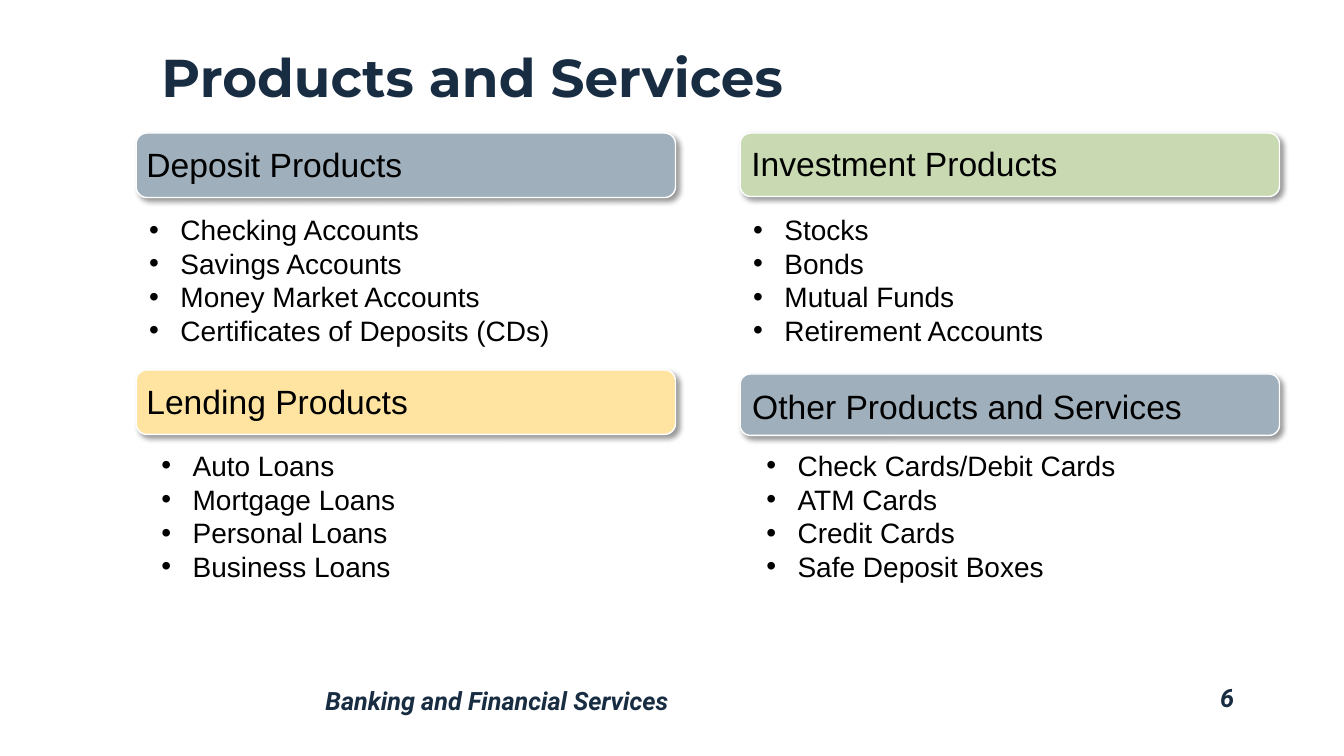
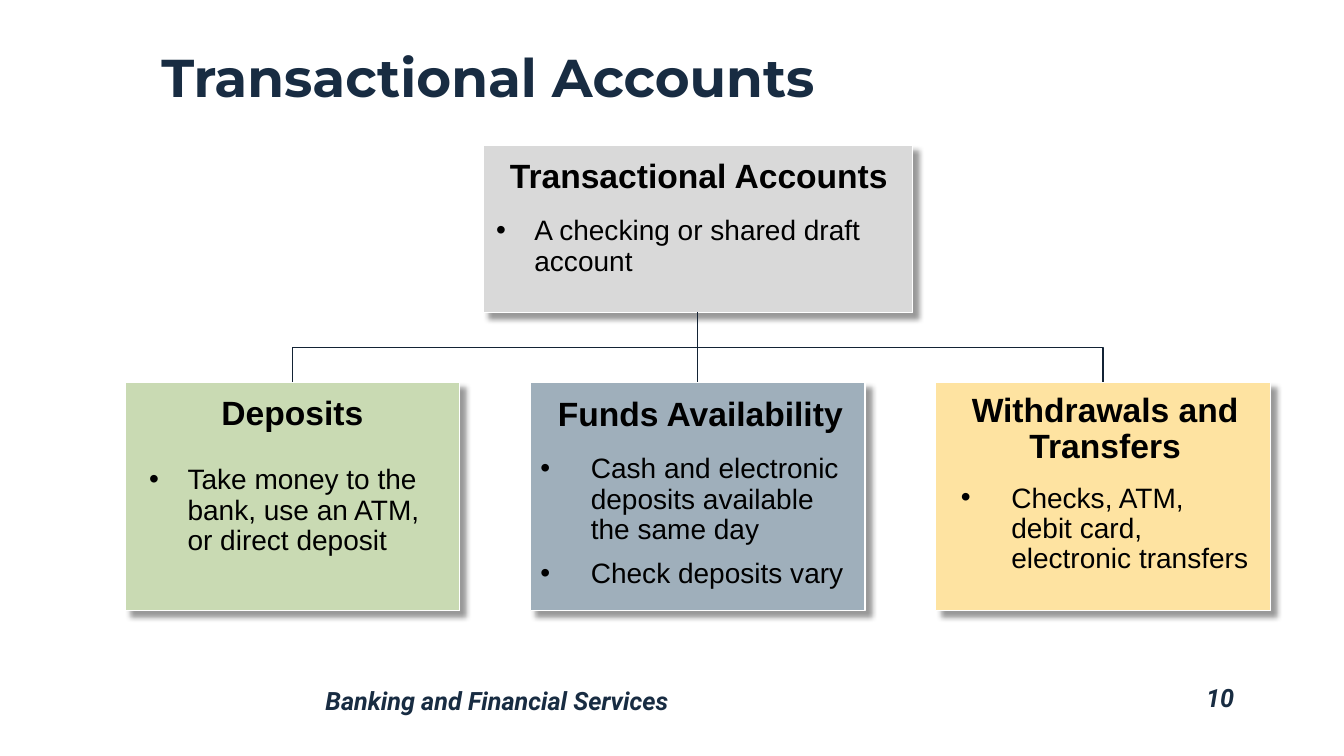
import pptx
import pptx.util
import pptx.dml.color
import pptx.enum.shapes
import pptx.enum.text
import pptx.oxml
import pptx.oxml.ns
from lxml import etree

Inches, Pt = pptx.util.Inches, pptx.util.Pt
SHAPE = pptx.enum.shapes.MSO_SHAPE
ALIGN = pptx.enum.text.PP_ALIGN
ANCHOR = pptx.enum.text.MSO_ANCHOR
qn = pptx.oxml.ns.qn

# Shared look
COLORS = {"navy": "182C42", "line": "132335", "black": "000000", "white": "FFFFFF",
          "slate": "9FAFBB", "yellow": "FEE3A1", "green": "C9DAB3", "gray": "D9D9D9"}
FOOTER = "Banking and Financial Services"
FOOTER_FORMAT = dict(font="Roboto", size=18, color="navy", bold=True, italic=True, spacing=0.9)

# Content: heading, fill, card box, heading inset (left, top), list items, list box
COL, CARD_W = (1.35, 7.34), 5.35
PRODUCTS = [
    ("Deposit Products", "slate", (COL[0], 1.32, CARD_W, 0.64), (0.07, 0.02),
     ["Checking Accounts", "Savings Accounts", "Money Market Accounts",
      "Certificates of Deposits (CDs)"], (1.38, 2.06, 5.35, 1.49)),
    ("Lending Products", "yellow", (COL[0], 3.67, CARD_W, 0.64), (0.07, 0.03),
     ["Auto Loans", "Mortgage Loans", "Personal Loans", "Business Loans"],
     (1.5, 4.4, 5.21, 1.37)),
    ("Investment Products", "green", (COL[1], 1.32, CARD_W, 0.63), (0.08, 0.02),
     ["Stocks", "Bonds", "Mutual Funds", "Retirement Accounts"],
     (7.37, 2.06, 4.97, 1.53)),
    ("Other Products and Services", "slate", (COL[1], 3.71, CARD_W, 0.61), (0.09, 0.07),
     ["Check Cards/Debit Cards", "ATM Cards", "Credit Cards", "Safe Deposit Boxes"],
     (7.5, 4.4, 4.7, 1.44)),
]

CHILD_X, CHILD_STEP, CHILD_Y, CHILD_W, CHILD_H = 1.24, 4.02, 3.79, 3.32, 2.27
BRANCHES = [(CHILD_X + i * CHILD_STEP, CHILD_Y, CHILD_W, CHILD_H) for i in range(3)]
ACCOUNTS = [
    ("Transactional Accounts", "gray", (4.79, 1.44, 4.26, 1.66), (0.12, 0.14),
     ["A checking or shared draft account"], (4.82, 2.1, 4.24, 0.9)),
    ("Deposits", "green", BRANCHES[0], (0.1, 0.14),
     ["Take money to the bank, use an ATM, or direct deposit"], (1.38, 4.57, 3.17, 1.01)),
    ("Funds Availability", "slate", BRANCHES[1], (0.15, 0.15),
     ["Cash and electronic deposits available the same day", "Check deposits vary"],
     (5.26, 4.46, 3.29, 1.06)),
    ("Withdrawals and Transfers", "yellow", BRANCHES[2], (0.14, 0.11),
     ["Checks, ATM, debit card, electronic transfers"], (9.43, 4.75, 3.06, 1.06)),
]
ACCOUNT_INDENTS = [0.38, 0.38, 0.5, 0.5]


def rgb(name):
    return pptx.dml.color.RGBColor.from_string(COLORS[name])


def place(sp, box):
    sp.left, sp.top, sp.width, sp.height = map(Inches, box)


def add_text(tf, lines, font="Arial", size=20, color="black", bold=False, italic=False,
             align=ALIGN.LEFT, anchor=ANCHOR.TOP, spacing=1.0, gap=0, indent=0,
             inset=(0.1, 0.05, 0.1, 0.05)):
    """Write paragraphs into a text frame; an indent makes them bulleted."""
    tf.word_wrap = True
    tf.auto_size = pptx.enum.text.MSO_AUTO_SIZE.NONE
    tf.vertical_anchor = anchor
    tf.margin_left, tf.margin_top, tf.margin_right, tf.margin_bottom = map(Inches, inset)
    for i, line in enumerate(lines):
        p = tf.add_paragraph() if i else tf.paragraphs[0]
        if indent:
            pPr = p._p.get_or_add_pPr()
            pPr.set("marL", str(Inches(indent)))
            pPr.set("indent", str(-Inches(indent)))
            etree.SubElement(pPr, qn("a:buFont")).set("typeface", "Arial")
            etree.SubElement(pPr, qn("a:buChar")).set("char", "•")
        p.alignment = align
        p.line_spacing = spacing
        p.space_before = Pt(gap if i else 0)
        p.space_after = Pt(0)
        r = p.add_run()
        r.text = line
        r.font.name, r.font.size = font, Pt(size)
        r.font.bold, r.font.italic = bold, italic
        r.font.color.rgb = rgb(color)


def add_slide(prs, title, number):
    """Comparison layout: a title and four body placeholders."""
    s = prs.slides.add_slide(prs.slide_layouts[4])
    place(s.shapes.title, (1.5, 0.11, 10.84, 1.02))
    add_text(s.shapes.title.text_frame, [title], font="Montserrat", size=38, color="navy",
             bold=True, anchor=ANCHOR.BOTTOM, spacing=0.9)
    for text, box, align in ((FOOTER, (3.13, 6.78, 7.63, 0.38), ALIGN.LEFT),
                             (str(number), (10.76, 6.75, 1.58, 0.38), ALIGN.RIGHT)):
        sp = s.shapes.add_textbox(*map(Inches, box))
        add_text(sp.text_frame, [text], align=align, **FOOTER_FORMAT)
    return s


def add_card(s, shape, fill, box, distance):
    """Filled card with a soft shadow, set behind the placeholders."""
    sp = s.shapes.add_shape(shape, *map(Inches, box))
    sp.fill.solid()
    sp.fill.fore_color.rgb = rgb(fill)
    sp.line.color.rgb = rgb("white")
    sp.line.width = Pt(1)
    sp.shadow.inherit = False
    effects = sp.element.spPr.find(qn("a:effectLst"))
    shadow = etree.SubElement(effects, qn("a:outerShdw"), blurRad=str(Pt(4)),
                              dist=str(Pt(distance)), dir=str(45 * 60000),
                              algn="tl", rotWithShape="0")
    color = etree.SubElement(shadow, qn("a:srgbClr"), val=COLORS["black"])
    etree.SubElement(color, qn("a:alpha"), val="40000")
    s.shapes.title.element.addprevious(sp.element)
    return sp


def add_cards(s, cards, shape, distance, heading, lists, indents):
    """Draw each card with its heading, and its list in a body placeholder."""
    shapes = []
    bodies = list(s.placeholders)[1:]
    for (name, fill, box, (left, top), items, list_box), body, indent in zip(
            cards, bodies, indents):
        sp = add_card(s, shape, fill, box, distance)
        add_text(sp.text_frame, [name], size=24, spacing=0.9,
                 inset=(left, top, 0.1, 0), **heading)
        place(body, list_box)
        add_text(body.text_frame, items, indent=indent, **lists)
        shapes.append(sp)
    return shapes


def style_line(line):
    line.color.rgb = rgb("line")
    line.width = Pt(1)


def add_trunk(s, parent, child):
    cx = s.shapes.add_connector(pptx.enum.shapes.MSO_CONNECTOR.STRAIGHT, 0, 0, 0, 0)
    cx.begin_connect(parent, 2)
    cx.end_connect(child, 0)
    style_line(cx.line)
    etree.SubElement(cx.element.spPr, qn("a:effectLst"))


def add_elbow(s, parent, child):
    """Open line from the parent's bottom to the child's top, turning halfway."""
    x1, y1 = parent.left + parent.width // 2, parent.top + parent.height
    x2, y2 = child.left + child.width // 2, child.top
    bar_y = (y1 + y2) // 2
    outline = s.shapes.build_freeform(x1, y1)
    outline.add_line_segments([(x1, bar_y), (x2, bar_y), (x2, y2)], close=False)
    sp = outline.convert_to_shape()
    sp.fill.background()
    style_line(sp.line)
    sp.shadow.inherit = False


def products_slide(prs):
    s = add_slide(prs, "Products and Services", 6)
    cards = add_cards(s, PRODUCTS, SHAPE.ROUNDED_RECTANGLE, 3,
                      dict(anchor=ANCHOR.MIDDLE), {}, [0.31] * 4)
    for sp in cards:
        sp.adjustments[0] = 0.17


def accounts_slide(prs):
    s = add_slide(prs, "Transactional Accounts", 10)
    parent, left, middle, right = add_cards(
        s, ACCOUNTS, SHAPE.RECTANGLE, 6, dict(bold=True, align=ALIGN.CENTER),
        dict(spacing=0.9, gap=10), ACCOUNT_INDENTS)
    # Tree lines
    add_trunk(s, parent, middle)
    for child in (left, right):
        add_elbow(s, parent, child)


def main():
    prs = pptx.Presentation()
    prs.slide_width, prs.slide_height = Inches(13.33), Inches(7.5)
    products_slide(prs)
    accounts_slide(prs)
    prs.save("out.pptx")


if __name__ == "__main__":
    main()
